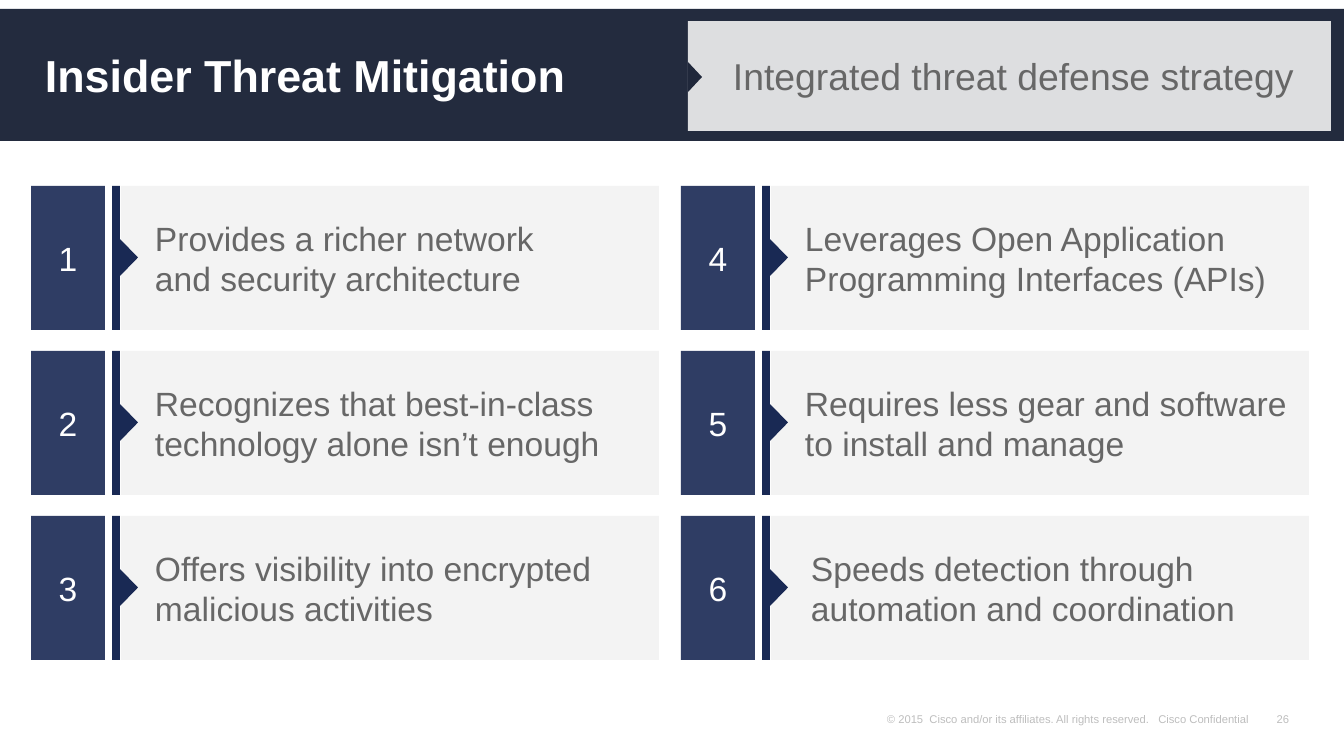
from dataclasses import dataclass

from lxml import etree
from pptx import Presentation
from pptx import util as u
from pptx.dml.color import RGBColor
from pptx.enum import shapes, text
from pptx.oxml.ns import qn

SCALE = 914400 / 134.4  # EMU in one px


def px(length):
    return u.Emu(round(length * SCALE))


@dataclass(frozen=True)
class Theme:
    font: str = "Arial"
    navy: str = "192954"
    header: str = "0C152A"
    panel: str = "F2F2F2"
    body: str = "676767"
    white: str = "FFFFFF"
    black: str = "000000"
    title_size: int = 24
    subtitle_size: int = 20
    body_size: int = 18
    footer_size: int = 6


THEME = Theme()


def paint(fill, color, opacity=100):
    fill.solid()
    fill.fore_color.rgb = RGBColor.from_string(color)
    if opacity < 100:
        solid = fill._xPr.find(qn("a:solidFill"))
        etree.SubElement(solid[0], qn("a:alpha"), val=str(opacity * 1000))


def write(shape, content, size=THEME.body_size, color=THEME.body, opacity=100,
          bold=False, align=text.PP_ALIGN.LEFT, anchor=text.MSO_ANCHOR.MIDDLE,
          insets=(34, 7, 13, 7), wrap=True):
    """Fill a shape with text, one paragraph for each line of content."""
    frame = shape.text_frame
    frame.auto_size = text.MSO_AUTO_SIZE.NONE
    frame.word_wrap = wrap
    frame.vertical_anchor = anchor
    (frame.margin_left, frame.margin_top,
     frame.margin_right, frame.margin_bottom) = map(px, insets)
    frame.text = content
    for paragraph in frame.paragraphs:
        paragraph.alignment = align
        font = paragraph.runs[0].font
        font.name, font.size, font.bold = THEME.font, u.Pt(size), bold
        paint(font.fill, color, opacity)


class SlideBuilder:
    def __init__(self, slide, theme):
        self.slide = slide
        self.theme = theme

    def title(self, content, box, **style):
        shape = self.slide.shapes.title
        shape.left, shape.top, shape.width, shape.height = map(px, box)
        paint(shape.fill, self.theme.header, 90)
        write(shape, content, **style)

    def block(self, box, color, opacity=100, kind=shapes.MSO_SHAPE.RECTANGLE):
        shape = self.slide.shapes.add_shape(kind, *map(px, box))
        shape.shadow.inherit = False
        shape.line.fill.background()
        paint(shape.fill, color, opacity)
        return shape

    def pointer(self, box, color, opacity=100):
        shape = self.block(box, color, opacity, shapes.MSO_SHAPE.ISOSCELES_TRIANGLE)
        shape.rotation = 90

    def label(self, content, box, **style):
        write(self.slide.shapes.add_textbox(*map(px, box)), content, **style)

    def card(self, number, content, left, top, indent=34):
        height = 144
        panel = self.block((left + 90, top, 538, height), self.theme.panel, 90)
        write(panel, content, insets=(indent, 7, 13, 7))
        self.block((left + 81, top, 8, height), self.theme.navy)
        self.pointer((left + 78, top + 62, 39, 19), self.theme.navy)
        tile = self.block((left, top, 74, height), self.theme.navy, 90)
        write(tile, str(number), color=self.theme.white,
              align=text.PP_ALIGN.CENTER, insets=(0, 7, 0, 7))


def main():
    presentation = Presentation()
    presentation.slide_width, presentation.slide_height = px(1344), px(756)
    slide = presentation.slides.add_slide(presentation.slide_layouts[5])
    builder = SlideBuilder(slide, THEME)

    # Header band with the subtitle panel
    header_insets = (45, 9, 17, 9)
    builder.title("Insider Threat Mitigation", (0, 9, 1344, 132),
                  size=THEME.title_size, color=THEME.white, bold=True,
                  insets=header_insets)
    subtitle = builder.block((688, 21, 643, 110), THEME.panel, 90)
    write(subtitle, "Integrated threat defense strategy",
          size=THEME.subtitle_size, insets=header_insets)
    builder.pointer((680, 70, 30, 14), THEME.header, 90)

    # Numbered cards, down the left column and then the right
    benefits = [
        "Provides a richer network\nand security architecture",
        "Recognizes that best-in-class technology alone isn’t enough",
        "Offers visibility into encrypted malicious activities",
        "Leverages Open Application Programming Interfaces (APIs)",
        "Requires less gear and software to install and manage",
        "Speeds detection through automation and coordination",
    ]
    for index, benefit in enumerate(benefits):
        column, row = divmod(index, 3)
        builder.card(index + 1, benefit, 31 + 650 * column, 186 + 165 * row,
                     indent=40 if index == 5 else 34)

    # Footer
    footer = dict(size=THEME.footer_size, color=THEME.black, opacity=25,
                  anchor=text.MSO_ANCHOR.BOTTOM, insets=(9, 4, 9, 4))
    builder.label("© 2015  Cisco and/or its affiliates. All rights reserved.   "
                  "Cisco Confidential", (878, 707, 391, 23), **footer)
    builder.label("26", (1266, 707, 32, 23), align=text.PP_ALIGN.RIGHT,
                  wrap=False, **footer)

    presentation.save("out.pptx")


if __name__ == "__main__":
    main()
